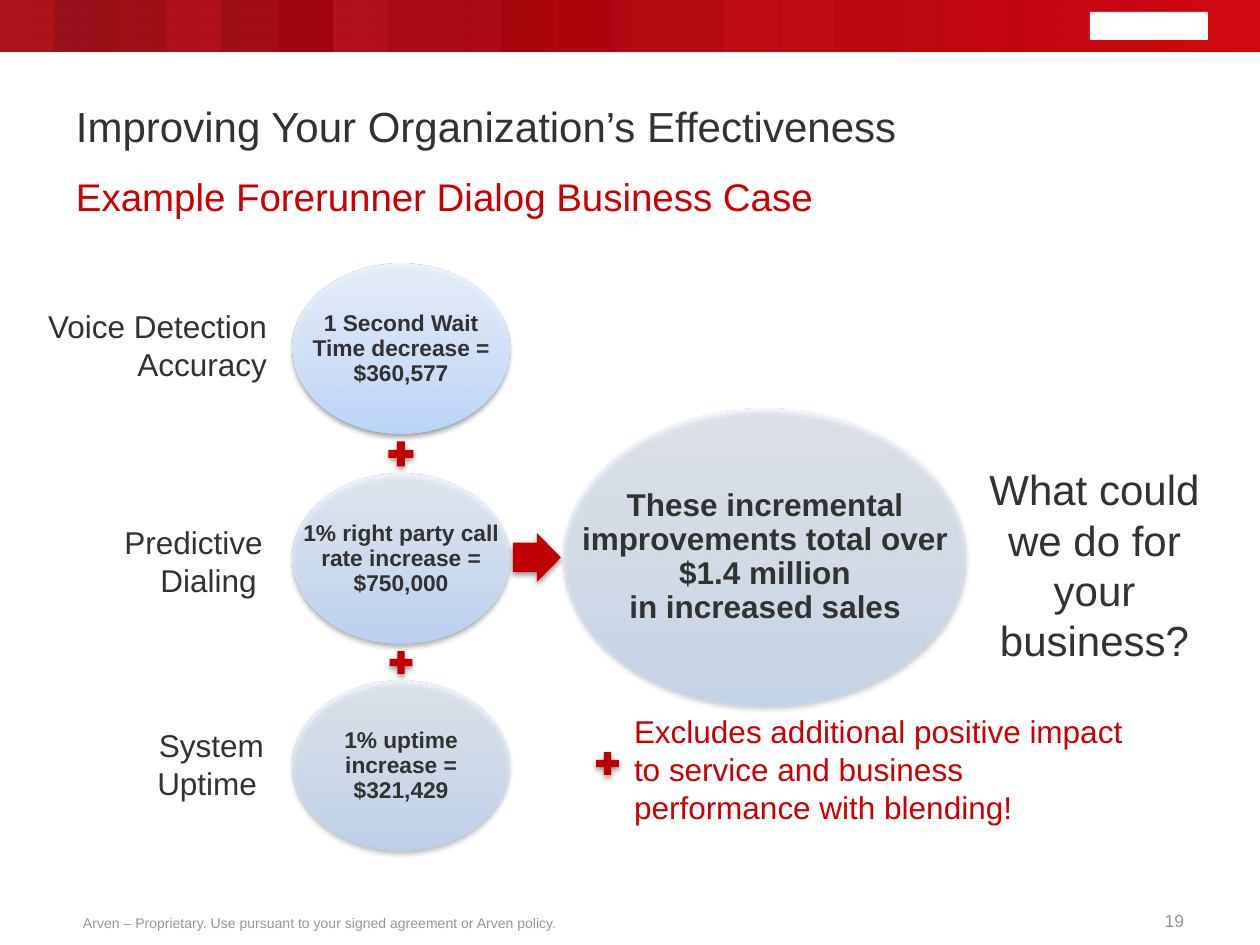
"""Build the business case slide: three gains that add up to one total."""
from lxml import etree
from pptx import Presentation
from pptx.dml.color import RGBColor
from pptx.enum.shapes import MSO_SHAPE as SHAPE
from pptx.enum.text import MSO_ANCHOR as ANCHOR, PP_ALIGN as ALIGN
from pptx.oxml import parse_xml
from pptx.oxml.ns import nsdecls, qn
from pptx.util import Pt

PX = 914400 / 126
COLORS = {
    "ink": "323232", "accent": "CC0000", "symbol": "C00000", "muted": "969696",
    "white": "FFFFFF", "light": "FF4747", "dark": "990000",
}
BANNER = (0, -1, 1260, 53)
BANNER_STOPS = [(0, "91050F", 76), (100, "D10811", 100)]
STRIPS = [
    (780, "light"), (724, "light"), (557, "dark"), (501, "dark"),
    (334, "light"), (279, "dark"), (167, "light"), (0, "light"),
    (1171, "dark"), (1115, "dark"), (1003, "dark"),
]
STRIP_WIDTH = 54
BRAND_MARK = (1090, 12, 118, 28)

GAINS = [
    (264, 90, "1 Second Wait Time decrease = $360,577"),
    (474, 77, "1% right party call rate increase = $750,000"),
    (681, 63, "1% uptime increase = $321,429"),
]
GAIN_LEFT, GAIN_WIDTH, GAIN_HEIGHT = 293, 216, 170
PLUS_SIZES = [34, 31]
TOTAL = (564, 409, 402, 297)
TOTAL_TEXT = "These incremental improvements total over\n$1.4 million\nin increased sales"
TOTAL_OPACITY = 50
ARROW = (513, 533, 48, 49)
NOTE_PLUS = (592, 748, 31, 31)

LABELS = [
    ((-35, 301, 315, 89), ["Voice Detection Accuracy"], ALIGN.RIGHT),
    ((85, 517, 194, 89), ["Predictive\nDialing "], ALIGN.CENTER),
    ((121, 720, 158, 89), ["System", "Uptime "], ALIGN.CENTER),
]
LABEL_MARGIN, LABEL_INDENT = 62, -39

TEXTS = [
    ((952, 281, 285, 567), ["What could we do for your business?"],
     dict(size=24, align=ALIGN.CENTER, anchor=ANCHOR.MIDDLE)),
    ((63, 52, 924, 106), ["Improving Your Organization’s Effectiveness"],
     dict(size=24, anchor=ANCHOR.BOTTOM, spacing=0.95)),
    ((63, 173, 1097, 47), ["Example Forerunner Dialog Business Case"],
     dict(size=22, color="accent", insets=(13, 0, 0, 0))),
    ((621, 706, 525, 127),
     ["Excludes additional positive impact to service and business "
      "performance with blending!"], dict(size=18, color="accent")),
    ((70, 908, 523, 29),
     ["Arven – Proprietary. Use pursuant to your signed agreement or Arven policy."],
     dict(size=8, color="muted", anchor=ANCHOR.BOTTOM)),
    ((1150, 904, 47, 34), ["19"],
     dict(size=10, color="muted", align=ALIGN.RIGHT, wrap=False)),
]


def px(value):
    return round(value * PX)


def emu(box):
    return [px(value) for value in box]


def add_figure(slide, preset, box, color="white", stops=None, angle=0, shadow=False):
    figure = slide.shapes.add_shape(preset, *emu(box))
    figure.fill.solid()
    figure.fill.fore_color.rgb = RGBColor.from_string(COLORS[color])
    figure.line.fill.background()
    figure.shadow.inherit = False
    properties = figure._element.spPr
    if stops:
        steps = "".join(
            f'<a:gs pos="{pos * 1000}"><a:srgbClr val="{tone}">'
            f'<a:alpha val="{opacity * 1000}"/></a:srgbClr></a:gs>'
            for pos, tone, opacity in stops)
        solid = properties.find(qn("a:solidFill"))
        properties.replace(solid, parse_xml(
            f'<a:gradFill {nsdecls("a")} rotWithShape="1"><a:gsLst>{steps}</a:gsLst>'
            f'<a:lin ang="{angle * 60000}" scaled="0"/></a:gradFill>'))
    if shadow:
        outer = etree.SubElement(
            properties.find(qn("a:effectLst")), qn("a:outerShdw"),
            blurRad=str(Pt(3.1)), dist=str(Pt(1.6)), dir="5400000", rotWithShape="0")
        tone = etree.SubElement(outer, qn("a:srgbClr"), val="000000")
        etree.SubElement(tone, qn("a:alpha"), val="38000")
    return figure


def add_text(slide, box, paragraphs, size, color="ink", bold=False, align=ALIGN.LEFT,
             anchor=ANCHOR.TOP, spacing=None, insets=(13, 6, 13, 6), wrap=True,
             margin=0, indent=0):
    frame = slide.shapes.add_textbox(*emu(box)).text_frame
    frame.word_wrap = wrap
    frame.vertical_anchor = anchor
    (frame.margin_left, frame.margin_top,
     frame.margin_right, frame.margin_bottom) = emu(insets)
    for index, content in enumerate(paragraphs):
        paragraph = frame.add_paragraph() if index else frame.paragraphs[0]
        paragraph.alignment = align
        if spacing:
            paragraph.line_spacing = spacing
        if margin:
            settings = paragraph._p.get_or_add_pPr()
            settings.set("marL", str(px(margin)))
            settings.set("indent", str(px(indent)))
        for number, line in enumerate(content.split("\n")):
            if number:
                paragraph.add_line_break()
            run = paragraph.add_run()
            run.text = line
            run.font.name = "Arial"
            run.font.size = Pt(size)
            run.font.bold = bold
            run.font.color.rgb = RGBColor.from_string(COLORS[color])


def add_bubble(slide, box, opacity, content, size, inset):
    stops = [(0, "BDD9FF", opacity), (35, "D0E4FF", opacity), (100, "EDF4FF", opacity)]
    add_figure(slide, SHAPE.OVAL, box, stops=stops, angle=270, shadow=True)
    add_text(slide, box, [content], size, bold=True, align=ALIGN.CENTER,
             anchor=ANCHOR.MIDDLE, spacing=0.9, insets=(inset,) * 4)


def add_banner(slide):
    add_figure(slide, SHAPE.RECTANGLE, BANNER, stops=BANNER_STOPS)
    for left, color in STRIPS:
        add_figure(slide, SHAPE.RECTANGLE, (left, BANNER[1], STRIP_WIDTH, BANNER[3]), color)
    add_figure(slide, SHAPE.RECTANGLE, BANNER, stops=BANNER_STOPS)
    add_figure(slide, SHAPE.RECTANGLE, BRAND_MARK)


def add_sum(slide):
    for top, opacity, content in GAINS:
        add_bubble(slide, (GAIN_LEFT, top, GAIN_WIDTH, GAIN_HEIGHT), opacity, content, 13, 6)
    center = GAIN_LEFT + GAIN_WIDTH / 2
    for size, upper, lower in zip(PLUS_SIZES, GAINS, GAINS[1:]):
        middle = (upper[0] + GAIN_HEIGHT + lower[0]) / 2
        plus = (center - size / 2, middle - size / 2, size, size)
        add_figure(slide, SHAPE.MATH_PLUS, plus, "symbol", shadow=True)
    arrow = add_figure(slide, SHAPE.RIGHT_ARROW, ARROW, "symbol", shadow=True)
    arrow.adjustments[0] = 0.6
    add_bubble(slide, TOTAL, TOTAL_OPACITY, TOTAL_TEXT, 18, 4)


def main():
    deck = Presentation()
    deck.slide_width, deck.slide_height = emu((1260, 945))
    slide = deck.slides.add_slide(deck.slide_layouts[6])
    add_banner(slide)
    add_sum(slide)
    for box, paragraphs, align in LABELS:
        add_text(slide, box, paragraphs, 18, align=align,
                 margin=LABEL_MARGIN, indent=LABEL_INDENT)
    for box, paragraphs, style in TEXTS:
        add_text(slide, box, paragraphs, **style)
    add_figure(slide, SHAPE.MATH_PLUS, NOTE_PLUS, "symbol", shadow=True)
    deck.save("out.pptx")


if __name__ == "__main__":
    main()
